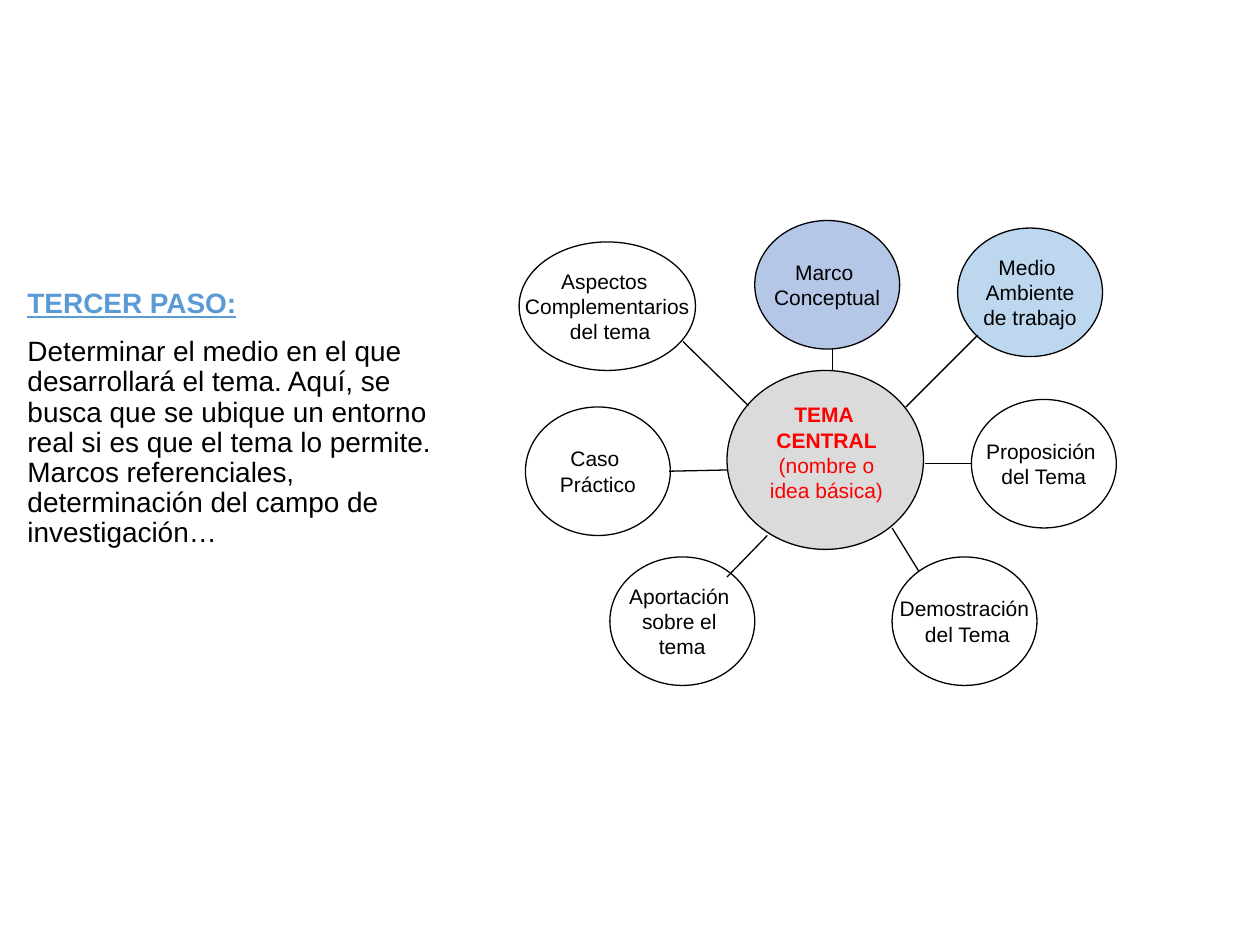
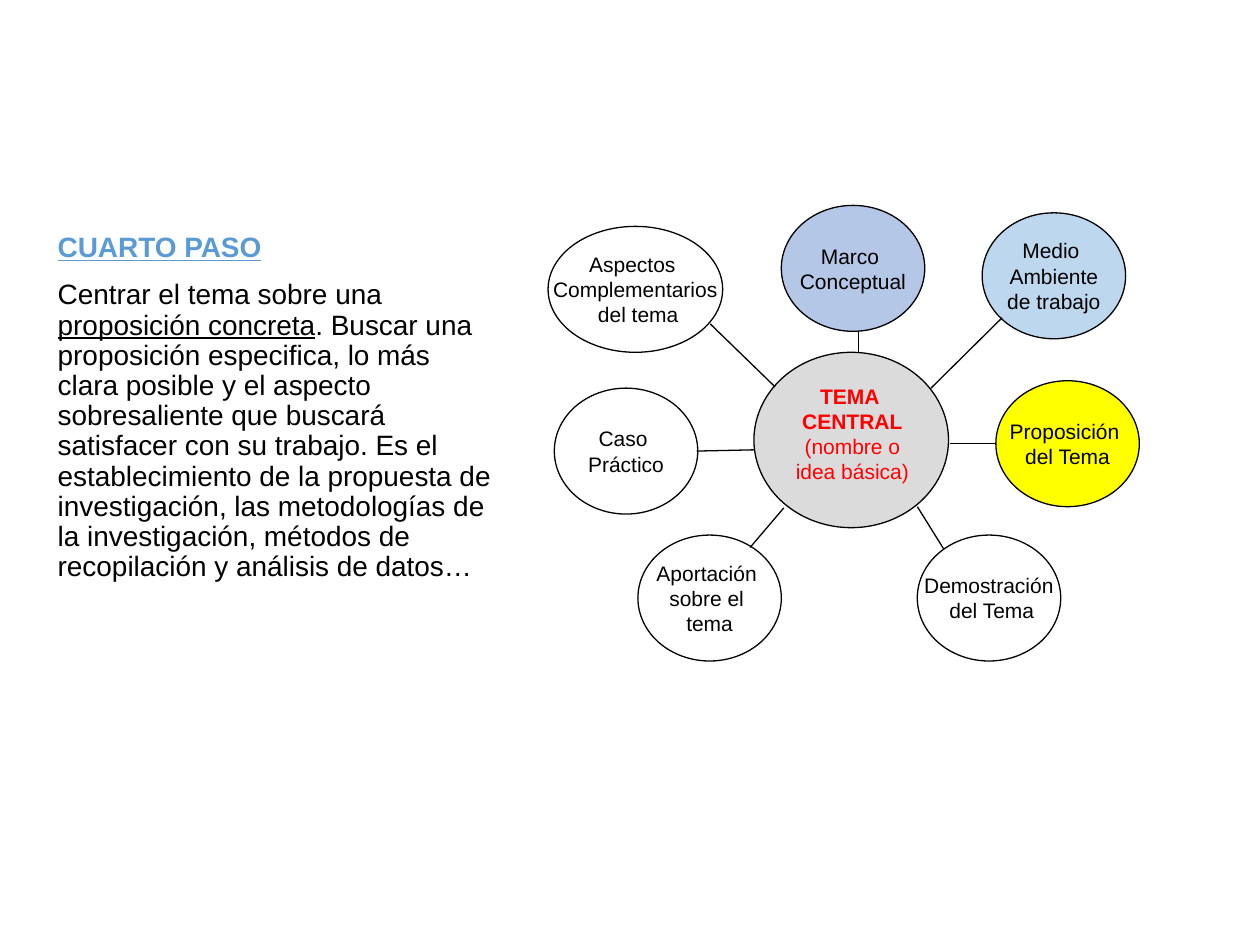
from dataclasses import dataclass

from lxml import etree
from pptx import Presentation, util as u
from pptx.dml import color as dml_color
from pptx.enum import shapes, text
from pptx.oxml import ns

COLUMNS, ROWS = 100, 75
CELL = u.Inches(0.1)
BLACK, RED, BLUE = "000000", "FF0000", "5B9BD5"
GREY, PALE_BLUE, LAVENDER, YELLOW = "DBDBDB", "BDD7EE", "B4C7E7", "FFFF00"
TOPIC_WIDTH, TOPIC_HEIGHT = 11.5, 10.2

CENTRE = (16.5, 11.9, 15.6, 14.2)
CENTRE_LABEL = (18.8, 14, 11.2, 8.8)
CENTRE_LINES = [("TEMA ", True), ("CENTRAL", True),
                ("(nombre o", False), ("idea básica)", False)]

TOPICS = [
    (["Aspectos ", "Complementarios", " del tema"], 0, 1.7, 14),
    (["Proposición ", "del Tema"], 35.9, 14.2, TOPIC_WIDTH),
    (["Medio ", "Ambiente", "de trabajo"], 34.8, 0.6, TOPIC_WIDTH),
    (["Demostración", " del Tema"], 29.6, 26.7, TOPIC_WIDTH),
    (["Marco ", "Conceptual"], 18.7, 0, TOPIC_WIDTH),
    (["Aportación ", "sobre el ", "tema"], 7.2, 26.7, TOPIC_WIDTH),
    (["Caso ", "Práctico"], 0.5, 14.8, TOPIC_WIDTH),
]
SPOKES = [
    (13, 9.6, 18.2, 14.7),
    (36.4, 9.1, 30.7, 14.8),
    (11.9, 19.9, 16.5, 19.8),
    (32.2, 19.3, 35.9, 19.3),
    (29.6, 24.4, 31.7, 27.8),
    (24.9, 10.2, 24.9, 11.9),
]


def rgb(value):
    return dml_color.RGBColor.from_string(value)


def add_text(paragraph, content, size=12, color=BLACK, bold=False, underline=False):
    run = paragraph.add_run()
    run.text = content
    run.font.name = "Arial"
    run.font.size = u.Pt(size)
    run.font.bold = bold
    run.font.underline = underline
    run.font.color.rgb = rgb(color)


def next_paragraph(frame, index):
    return frame.add_paragraph() if index else frame.paragraphs[0]


@dataclass
class Grid:
    left: float = 0
    top: float = 0
    column: float = 1
    row: float = 1

    def point(self, x, y):
        return (round((self.left + x * self.column) * CELL),
                round((self.top + y * self.row) * CELL))

    def box(self, left, top, width, height):
        return (*self.point(left, top),
                round(width * self.column * CELL), round(height * self.row * CELL))


class StepSlide:
    def __init__(self, presentation, grid):
        self.slide = presentation.slides.add_slide(presentation.slide_layouts[6])
        self.grid = grid

    def body(self, box, heading, pieces):
        frame = self.slide.shapes.add_textbox(*Grid().box(*box)).text_frame
        frame.word_wrap = True
        for index in range(2):
            paragraph = next_paragraph(frame, index)
            paragraph.line_spacing = 0.9
            paragraph.space_before = u.Pt(10)
            if index == 0:
                add_text(paragraph, heading, size=16, color=BLUE,
                         bold=True, underline=True)
                continue
            for content, underline in pieces:
                add_text(paragraph, content, size=16, underline=underline)

    def label(self, frame, lines, color=BLACK, wrap=False):
        frame.margin_left = frame.margin_right = u.Inches(0.07)
        frame.margin_top = frame.margin_bottom = u.Inches(0.04)
        frame.word_wrap = wrap
        for index, (content, bold) in enumerate(lines):
            paragraph = next_paragraph(frame, index)
            paragraph.alignment = text.PP_ALIGN.CENTER
            add_text(paragraph, content, color=color, bold=bold)

    def ellipse(self, box, fill=None):
        shape = self.slide.shapes.add_shape(
            shapes.MSO_SHAPE.OVAL, *self.grid.box(*box))
        shape.shadow.inherit = False
        if fill:
            shape.fill.solid()
            shape.fill.fore_color.rgb = rgb(fill)
        else:
            shape.fill.background()
        self.outline(shape.line)
        return shape

    def outline(self, line):
        line.color.rgb = rgb(BLACK)
        line.width = u.Pt(0.75)

    def spoke(self, x1, y1, x2, y2):
        connector = self.slide.shapes.add_connector(
            shapes.MSO_CONNECTOR.STRAIGHT,
            *self.grid.point(x1, y1), *self.grid.point(x2, y2))
        self.outline(connector.line)
        etree.SubElement(connector._element.spPr, ns.qn("a:effectLst"))

    def concept_map(self, fills, contribution_spoke):
        self.ellipse(CENTRE, GREY)
        centre_label = self.slide.shapes.add_textbox(*self.grid.box(*CENTRE_LABEL))
        self.label(centre_label.text_frame, CENTRE_LINES, color=RED, wrap=True)
        for lines, left, top, width in TOPICS:
            fill = fills.get(lines[0].strip())
            shape = self.ellipse((left, top, width, TOPIC_HEIGHT), fill)
            shape.text_frame.vertical_anchor = text.MSO_ANCHOR.MIDDLE
            self.label(shape.text_frame, [(line, False) for line in lines])
        for spoke in [*SPOKES, contribution_spoke]:
            self.spoke(*spoke)


def main():
    presentation = Presentation()
    presentation.slide_width = COLUMNS * CELL
    presentation.slide_height = ROWS * CELL
    fills = {"Marco": LAVENDER, "Medio": PALE_BLUE}

    third = StepSlide(presentation, Grid(41.2, 17.5))
    third.body((1.2, 22.5, 34.4, 43.1), "TERCER PASO:", [
        ("Determinar el medio en el que desarrollará el tema. Aquí, se busca que "
         "se ubique un entorno real si es que el tema lo permite. Marcos "
         "referenciales, determinación del campo de investigación…", False),
    ])
    third.concept_map(fills, (19.7, 25, 16.5, 28.3))

    fourth = StepSlide(presentation, Grid(43.5, 16.3, 0.99, 0.98))
    fourth.body((3.6, 18, 36.6, 43.1), "CUARTO PASO", [
        ("Centrar el tema sobre una ", False),
        ("proposición concreta", True),
        (". Buscar una proposición especifica, lo más clara posible y el aspecto "
         "sobresaliente que buscará satisfacer con su trabajo. Es el "
         "establecimiento de la propuesta de investigación, las metodologías de "
         "la investigación, métodos de recopilación y análisis de datos…", False),
    ])
    fourth.concept_map({**fills, "Proposición": YELLOW}, (18.9, 24.5, 16.2, 27.7))

    presentation.save("out.pptx")


if __name__ == "__main__":
    main()
